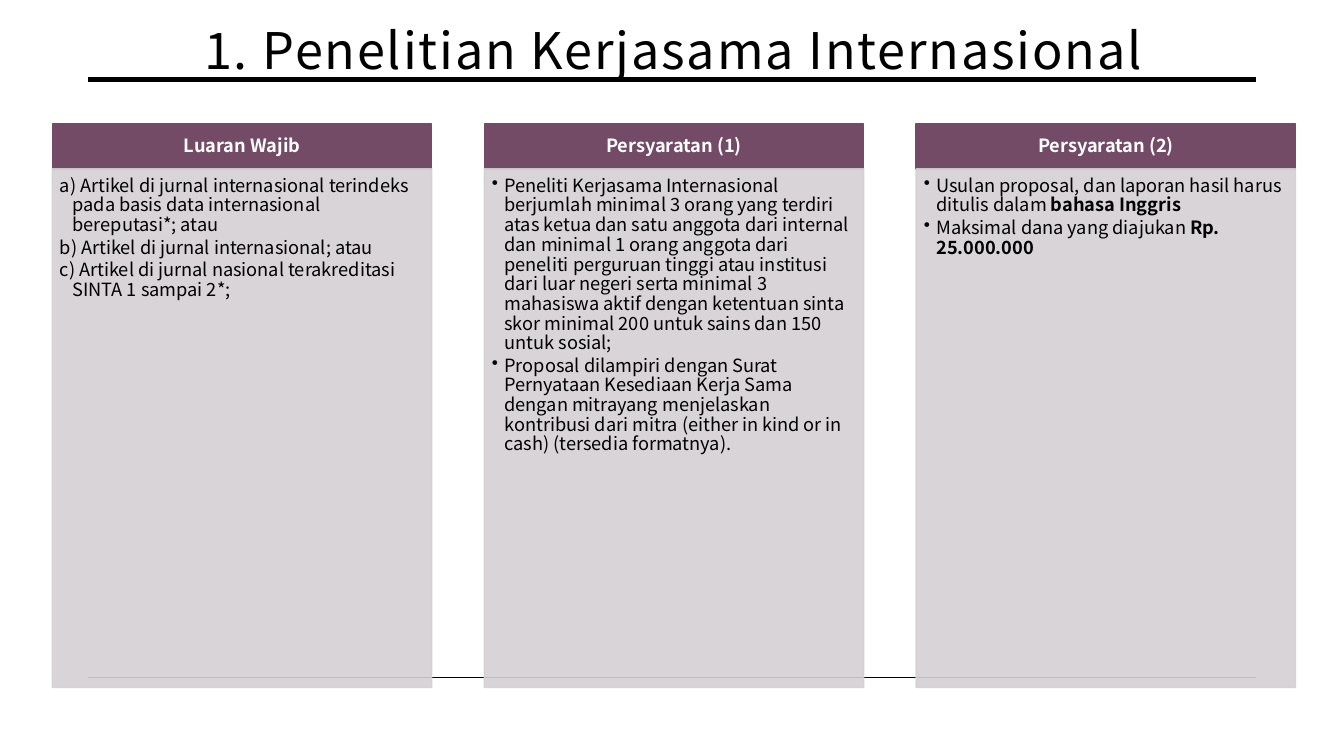
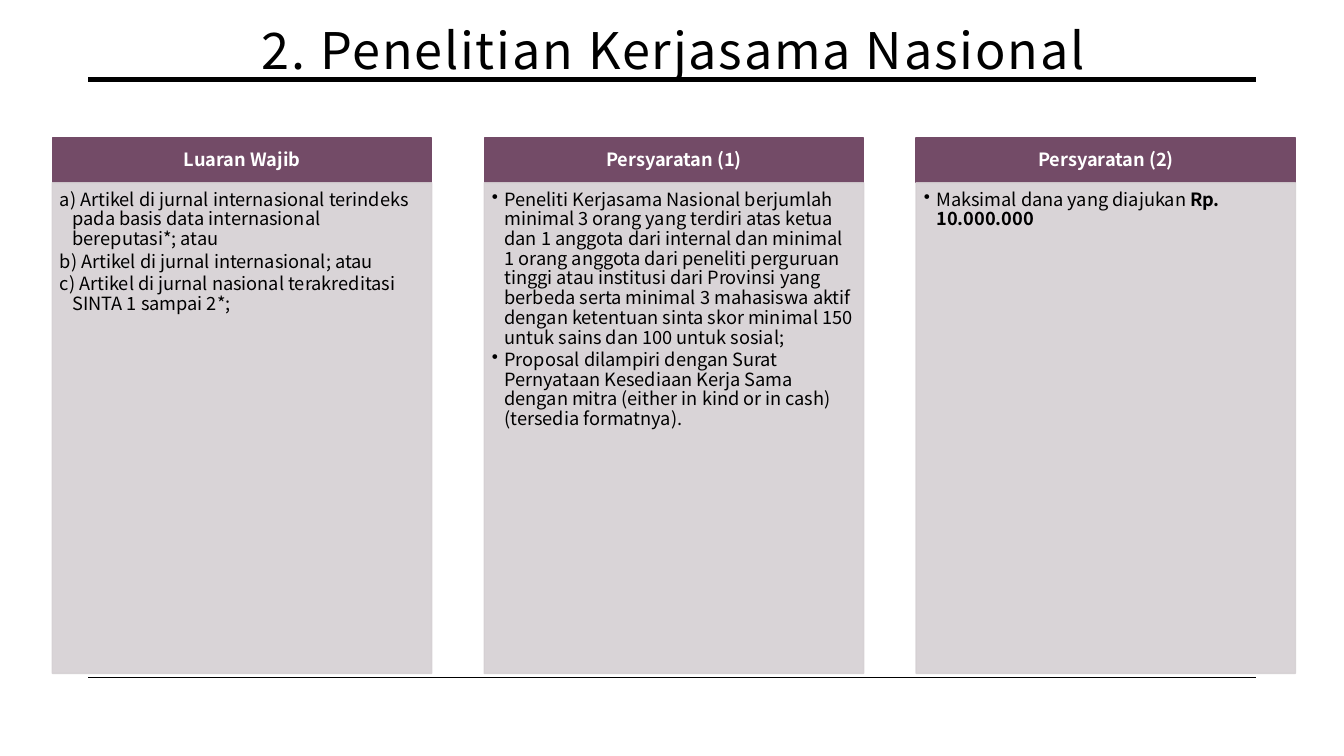
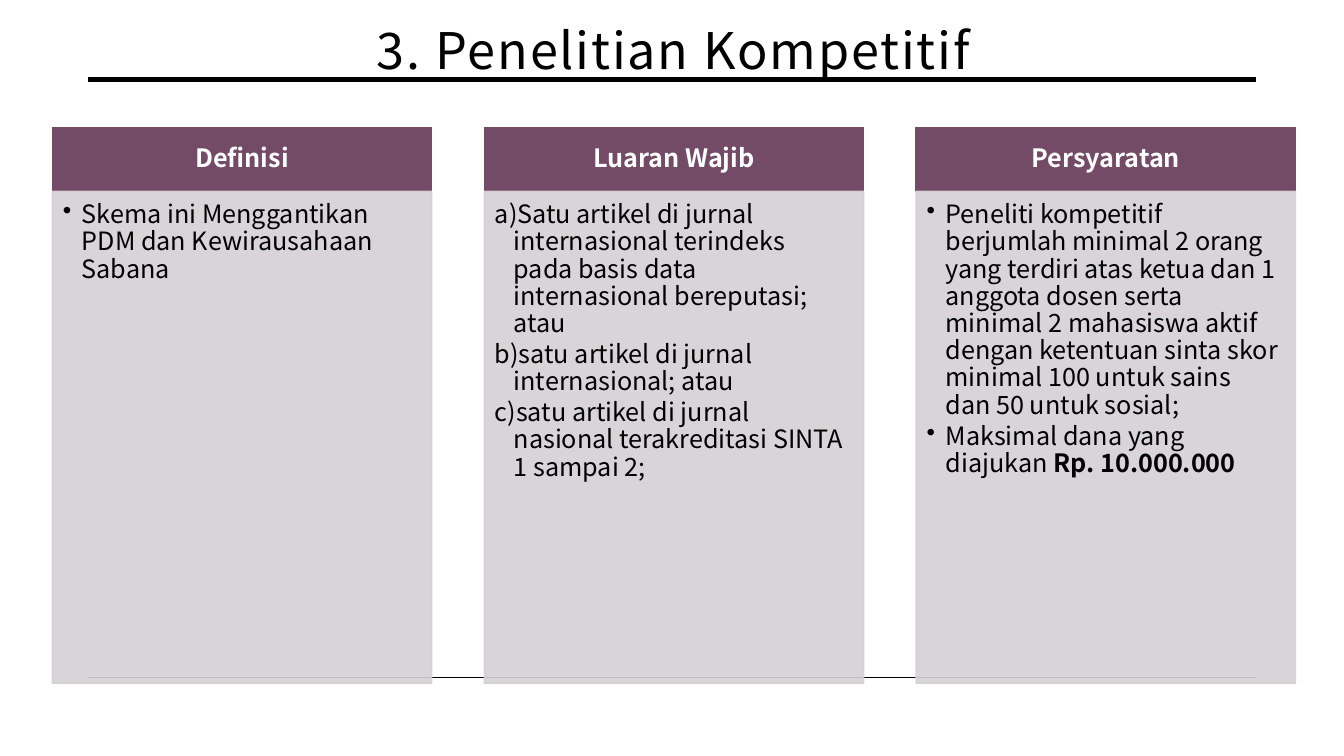
from collections import namedtuple

from lxml import etree
from pptx import Presentation
from pptx.dml.color import RGBColor
from pptx.enum import shapes, text
from pptx.oxml import ns
from pptx.util import Pt

BLACK = RGBColor(0x00, 0x00, 0x00)
WHITE = RGBColor(0xFF, 0xFF, 0xFF)
PLUM = RGBColor(0x73, 0x4B, 0x67)
MIST = RGBColor(0xD5, 0xD0, 0xD3)
FONT = "Noto Sans CJK JP"

Box = namedtuple("Box", "left top width height")
Scale = namedtuple("Scale", "size indent header_height")
Column = namedtuple("Column", "heading items lettered")

SMALL = Scale(13, 9, 32)
LARGE = Scale(18, 13.5, 45.4)
TITLE_BOX = Box(60.5, 0, 841.7, 79.2)
RULES = [(56.9, 3.5), (483.8, 1)]
RULE_LEFT, RULE_RIGHT = 63, 897.1
COLUMN_WIDTH = 271
COLUMN_COUNT = 3

OUTPUTS = Column("Luaran Wajib", [
    " Artikel di jurnal internasional terindeks pada basis data internasional bereputasi*; atau",
    " Artikel di jurnal internasional; atau",
    " Artikel di jurnal nasional terakreditasi SINTA 1 sampai 2*;",
], True)

SLIDES = [
    ("1. Penelitian Kerjasama Internasional", SMALL, Box(37.4, 88.6, 888, 402.4), [
        OUTPUTS,
        Column("Persyaratan (1)", [
            "Peneliti Kerjasama Internasional berjumlah minimal 3 orang yang terdiri atas ketua "
            "dan satu anggota dari internal dan minimal 1 orang anggota dari peneliti perguruan "
            "tinggi atau institusi dari luar negeri serta minimal 3 mahasiswa aktif dengan "
            "ketentuan sinta skor minimal 200 untuk sains dan 150 untuk sosial;",
            "Proposal dilampiri dengan Surat Pernyataan Kesediaan Kerja Sama dengan mitrayang "
            "menjelaskan kontribusi dari mitra (either in kind or in cash) (tersedia formatnya).",
        ], False),
        Column("Persyaratan (2)", [
            "Usulan proposal, dan laporan hasil harus ditulis dalam **bahasa Inggris**",
            "Maksimal dana yang diajukan **Rp. 25.000.000**",
        ], False),
    ]),
    ("2. Penelitian Kerjasama Nasional", SMALL, Box(37.4, 98.6, 888, 382.4), [
        OUTPUTS,
        Column("Persyaratan (1)", [
            "Peneliti Kerjasama Nasional berjumlah minimal 3 orang yang terdiri atas ketua dan "
            "1 anggota dari internal dan minimal 1 orang anggota dari peneliti perguruan tinggi "
            "atau institusi dari Provinsi yang berbeda serta minimal 3 mahasiswa aktif dengan "
            "ketentuan sinta skor minimal 150 untuk sains dan 100 untuk sosial;",
            "Proposal dilampiri dengan Surat Pernyataan Kesediaan Kerja Sama dengan mitra "
            "(either in kind or in cash) (tersedia formatnya).",
        ], False),
        Column("Persyaratan (2)", ["Maksimal dana yang diajukan **Rp. 10.000.000**"], False),
    ]),
    ("3. Penelitian Kompetitif", LARGE, Box(37.4, 91.2, 888, 397), [
        Column("Definisi", ["Skema ini Menggantikan PDM dan Kewirausahaan Sabana"], False),
        Column("Luaran Wajib", [
            "Satu artikel di jurnal internasional terindeks pada basis data internasional "
            "bereputasi; atau",
            "satu artikel di jurnal internasional; atau",
            "satu artikel di jurnal nasional terakreditasi SINTA 1 sampai 2;",
        ], True),
        Column("Persyaratan", [
            "Peneliti kompetitif berjumlah minimal 2 orang yang terdiri atas ketua dan 1 anggota "
            "dosen serta minimal 2 mahasiswa aktif dengan ketentuan sinta skor minimal 100 untuk "
            "sains dan 50 untuk sosial;",
            "Maksimal dana yang diajukan **Rp. 10.000.000**",
        ], False),
    ]),
]


def set_font(para, size, color, bold=False):
    para.font.name = FONT
    para.font.size = Pt(size)
    para.font.color.rgb = color
    para.font.bold = bold


def set_insets(frame, left, top, right, bottom):
    frame.margin_left, frame.margin_top = Pt(left), Pt(top)
    frame.margin_right, frame.margin_bottom = Pt(right), Pt(bottom)


def set_bullet(para, indent, lettered):
    props = para._p.get_or_add_pPr()
    props.set("marL", str(Pt(indent)))
    props.set("indent", str(-Pt(indent)))
    if lettered:
        etree.SubElement(props, ns.qn("a:buAutoNum"), type="alphaLcParenR")
    else:
        etree.SubElement(props, ns.qn("a:buChar"), char="•")


def set_opacity(shape, percent):
    for color in shape.element.spPr.iter(ns.qn("a:srgbClr")):
        etree.SubElement(color, ns.qn("a:alpha"), val=str(percent * 1000))


def add_panel(page, box, color):
    panel = page.shapes.add_shape(shapes.MSO_SHAPE.RECTANGLE, *map(Pt, box))
    panel.shadow.inherit = False
    panel.fill.solid()
    panel.fill.fore_color.rgb = color
    panel.line.color.rgb = color
    panel.line.width = Pt(1)
    panel.text_frame.word_wrap = True
    return panel


def add_header(page, box, heading, size):
    frame = add_panel(page, box, PLUM).text_frame
    frame.vertical_anchor = text.MSO_ANCHOR.MIDDLE
    set_insets(frame, size * 0.56, size * 0.32, size * 0.56, size * 0.32)
    para = frame.paragraphs[0]
    para.text = heading
    para.alignment = text.PP_ALIGN.CENTER
    para.line_spacing = 0.9
    set_font(para, size, WHITE, True)


def add_body(page, box, column, scale):
    panel = add_panel(page, box, MIST)
    set_opacity(panel, 90)
    frame = panel.text_frame
    frame.vertical_anchor = text.MSO_ANCHOR.TOP
    size = scale.size
    set_insets(frame, size * 0.42, size * 0.42, size * 0.56, size * 0.63)
    for index, item in enumerate(column.items):
        para = frame.add_paragraph() if index else frame.paragraphs[0]
        set_bullet(para, scale.indent, column.lettered)
        para.alignment = text.PP_ALIGN.LEFT
        para.line_spacing = 0.9
        para.space_after = Pt(size * 0.15)
        set_font(para, size, BLACK)
        for part, words in enumerate(item.split("**")):
            if words:
                span = para.add_run()
                span.text = words
                if part % 2:
                    span.font.bold = True


def add_columns(page, box, columns, scale):
    step = (box.width - COLUMN_WIDTH) / (COLUMN_COUNT - 1)
    head = scale.header_height
    for index, column in enumerate(columns):
        left = box.left + index * step
        add_header(page, Box(left, box.top, COLUMN_WIDTH, head), column.heading, scale.size)
        body = Box(left, box.top + head, COLUMN_WIDTH, box.height - head)
        add_body(page, body, column, scale)


def add_rules(page):
    for top, weight in RULES:
        rule = page.shapes.add_connector(
            shapes.MSO_CONNECTOR.STRAIGHT, Pt(RULE_LEFT), Pt(top), Pt(RULE_RIGHT), Pt(top))
        rule.line.color.rgb = BLACK
        rule.line.width = Pt(weight)
        etree.SubElement(rule.element.spPr, ns.qn("a:effectLst"))
        page.slide_layout.shapes.element.append(rule.element)


def set_title(page, box, words):
    title = page.shapes.title
    title.left, title.top, title.width, title.height = map(Pt, box)
    frame = title.text_frame
    frame.auto_size = text.MSO_AUTO_SIZE.NONE
    frame.vertical_anchor = text.MSO_ANCHOR.TOP
    set_insets(frame, 9, 9, 9, 7.2)
    para = frame.paragraphs[0]
    para.alignment = text.PP_ALIGN.CENTER
    para.line_spacing = 1.1
    set_font(para, 36, BLACK)
    span = para.add_run()
    span.text = words
    span._r.get_or_add_rPr().set("spc", "130")


def main():
    deck = Presentation()
    deck.slide_width, deck.slide_height = Pt(960), Pt(540)
    layout = deck.slide_layouts.get_by_name("Title Only")
    for index, (words, scale, box, columns) in enumerate(SLIDES):
        page = deck.slides.add_slide(layout)
        if index == 0:
            add_rules(page)
        set_title(page, TITLE_BOX, words)
        add_columns(page, box, columns, scale)
    deck.save("out.pptx")


if __name__ == "__main__":
    main()
